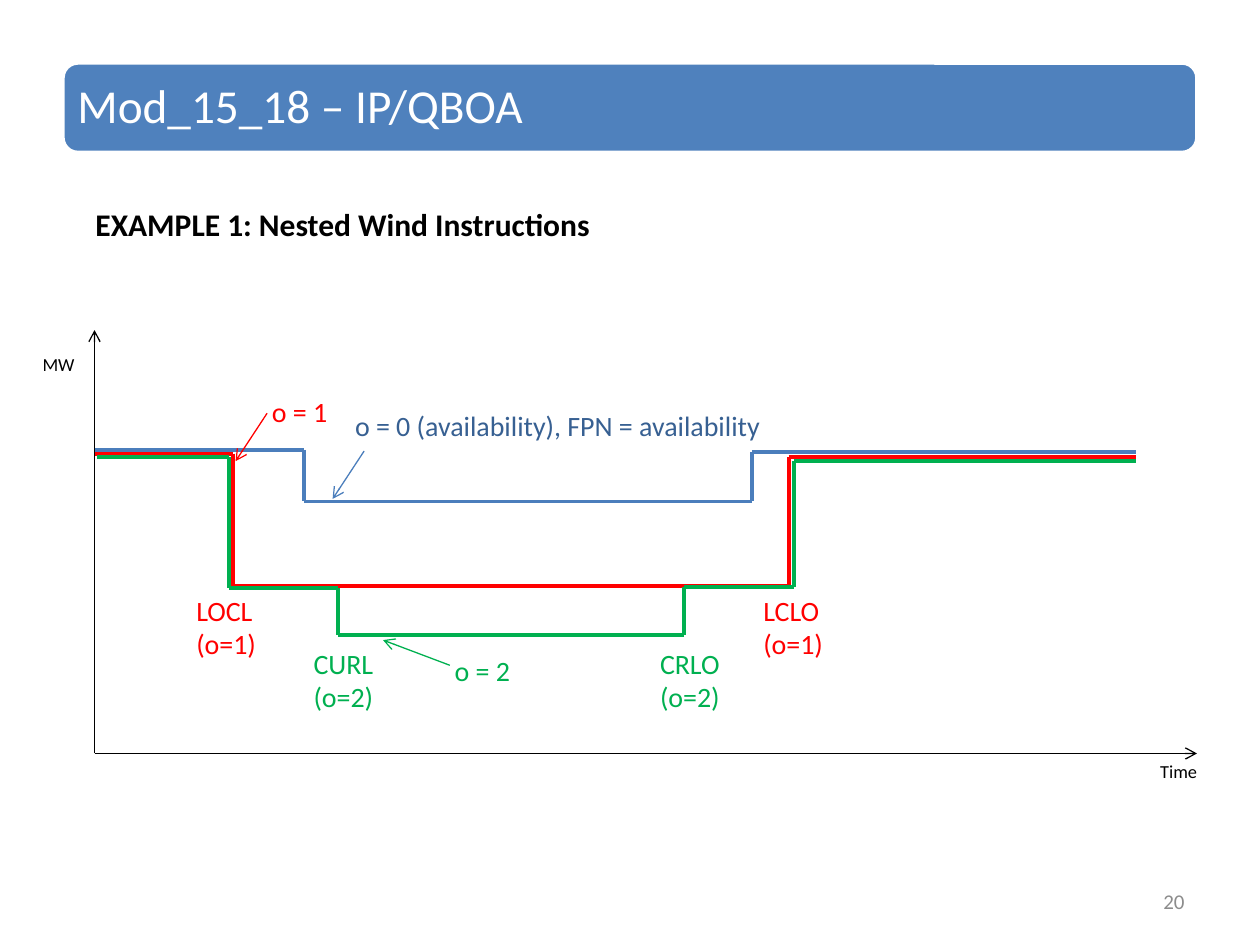
from dataclasses import dataclass
from itertools import pairwise

from lxml import etree
from pptx import Presentation
from pptx.dml.color import RGBColor
from pptx.enum import shapes, text
from pptx.oxml import ns
from pptx.util import Inches, Pt


@dataclass(frozen=True)
class Theme:
    font: str = "Calibri"
    black: str = "000000"
    white: str = "FFFFFF"
    grey: str = "8C8C8C"
    banner: str = "4F81BD"
    blue: str = "4B7EBC"
    navy: str = "376092"
    red: str = "FF0000"
    green: str = "00B050"
    title: float = 27
    heading: float = 18
    label: float = 16
    number: float = 12
    axis: float = 10.5
    thin: float = 0.75
    thick: float = 2.25


THEME = Theme()


def write_text(shape, content, size, color, bold=False, align=text.PP_ALIGN.LEFT,
               anchor=text.MSO_ANCHOR.TOP, wrap=True, spacing=None, margin=None):
    frame = shape.text_frame
    frame.word_wrap = wrap
    frame.vertical_anchor = anchor
    if margin is not None:
        frame.margin_left = frame.margin_right = Inches(margin)
        frame.margin_top = frame.margin_bottom = Inches(margin)
    for index, line in enumerate(content.split("\n")):
        para = frame.add_paragraph() if index else frame.paragraphs[0]
        para.alignment = align
        para.line_spacing = spacing
        span = para.add_run()
        span.text = line
        span.font.name = THEME.font
        span.font.size = Pt(size)
        span.font.bold = bold
        span.font.color.rgb = RGBColor.from_string(color)


def add_text(page, box, content, size, color, **options):
    shape = page.shapes.add_textbox(*map(Inches, box))
    write_text(shape, content, size, color, **options)


def add_line(page, start, end, color, width, arrow=False):
    line = page.shapes.add_connector(
        shapes.MSO_CONNECTOR.STRAIGHT, *map(Inches, (*start, *end)))
    line.line.color.rgb = RGBColor.from_string(color)
    line.line.width = Pt(width)
    properties = line._element.spPr
    if arrow:
        etree.SubElement(properties.find(ns.qn("a:ln")), ns.qn("a:tailEnd"), type="arrow")
    etree.SubElement(properties, ns.qn("a:effectLst"))


def add_banner(page, box, title):
    banner = page.shapes.add_shape(shapes.MSO_SHAPE.ROUNDED_RECTANGLE, *map(Inches, box))
    banner.shadow.inherit = False
    banner.fill.solid()
    banner.fill.fore_color.rgb = RGBColor.from_string(THEME.banner)
    banner.line.color.rgb = RGBColor.from_string(THEME.white)
    banner.line.width = Pt(2)
    write_text(banner, title, THEME.title, THEME.white, spacing=0.9, margin=0.08,
               anchor=text.MSO_ANCHOR.MIDDLE)


def add_diagram(page, box):
    left, top, width, height = box

    def at(x, y):
        return left + x, top + y

    # Axes
    for end in ((0, 0), (width, height)):
        add_line(page, at(0, height), at(*end), THEME.black, THEME.thin, arrow=True)

    # Stepped power profiles: availability, outer and nested instruction
    profiles = (
        (THEME.blue, ((0, 0.95), (1.66, 0.95), (1.66, 1.36), (5.22, 1.36),
                      (5.22, 0.97), (8.27, 0.97))),
        (THEME.red, ((0, 0.98), (1.1, 0.98), (1.1, 2.03), (5.51, 2.03),
                     (5.51, 1.01), (8.27, 1.01))),
        (THEME.green, ((0.02, 1.01), (1.07, 1.01), (1.07, 2.05), (1.93, 2.05),
                       (1.93, 2.42), (4.68, 2.42), (4.68, 2.04), (5.55, 2.04),
                       (5.55, 1.04), (8.27, 1.04))),
    )
    for color, points in profiles:
        for start, end in pairwise(points):
            add_line(page, at(*start), at(*end), color, THEME.thick)

    # Pointers from the labels to the profiles
    pointers = (
        (THEME.blue, (2.14, 0.96), (1.89, 1.34)),
        (THEME.red, (1.37, 0.66), (1.12, 1.04)),
        (THEME.green, (2.82, 2.66), (2.29, 2.46)),
    )
    for color, start, end in pointers:
        add_line(page, at(*start), at(*end), color, THEME.thin, arrow=True)

    # Labels
    labels = (
        ("MW", (-0.51, 0.13), (0.58, 0.29), THEME.axis, THEME.black),
        ("Time", (8.36, height), (0.58, 0.29), THEME.axis, THEME.black),
        ("LOCL\n(o=1)", (0.71, 2.04), (0.9, 0.64), THEME.label, THEME.red),
        ("LCLO\n(o=1)", (5.21, 2.04), (0.9, 0.64), THEME.label, THEME.red),
        ("CURL\n(o=2)", (1.64, 2.46), (0.9, 0.64), THEME.label, THEME.green),
        ("CRLO\n(o=2)", (4.39, 2.46), (0.9, 0.64), THEME.label, THEME.green),
        ("o = 0 (availability), FPN = availability", (1.97, 0.57), (3.63, 0.37),
         THEME.label, THEME.navy),
        ("o = 1", (1.31, 0.46), (0.65, 0.37), THEME.label, THEME.red),
        ("o = 2", (2.76, 2.52), (0.65, 0.37), THEME.label, THEME.green),
    )
    for content, corner, size, points, color in labels:
        add_text(page, (*at(*corner), *size), content, points, color,
                 wrap=not content.startswith(("o = 1", "o = 2")))


def main():
    deck = Presentation()
    deck.slide_width, deck.slide_height = Inches(10), Inches(7.5)
    page = deck.slides.add_slide(deck.slide_layouts[6])

    add_banner(page, (0.5, 0.5, 9, 0.71), "Mod_15_18 – IP/QBOA")
    add_text(page, (0.66, 1.58, 8.04, 0.71), "EXAMPLE 1: Nested Wind Instructions",
             THEME.heading, THEME.black, bold=True)
    add_diagram(page, (0.75, 2.62, 8.75, 3.36))
    add_text(page, (7.17, 6.95, 2.33, 0.4), "20", THEME.number, THEME.grey,
             align=text.PP_ALIGN.RIGHT, anchor=text.MSO_ANCHOR.MIDDLE)
    deck.save("out.pptx")


if __name__ == "__main__":
    main()
